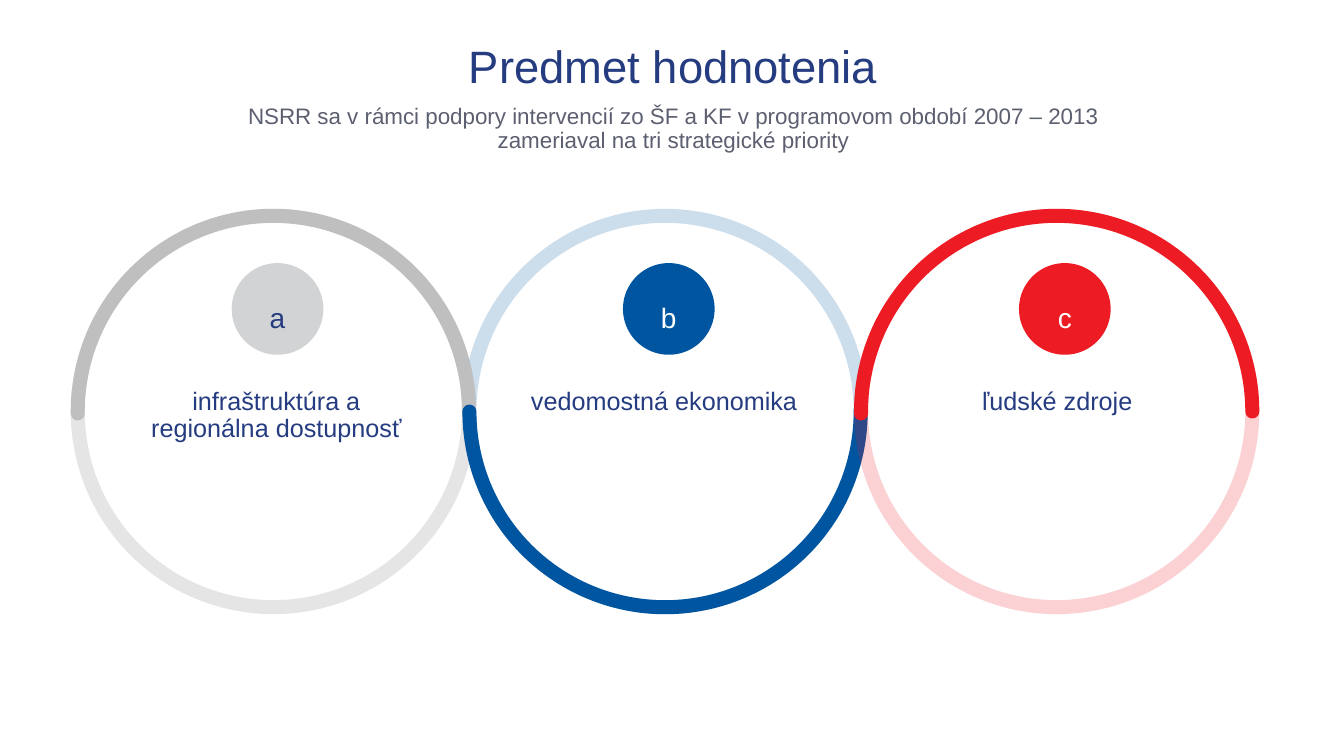
from lxml import etree
from pptx import Presentation
from pptx.dml.color import RGBColor
from pptx.enum.shapes import MSO_SHAPE
from pptx.enum.text import MSO_ANCHOR, PP_ALIGN
from pptx.oxml.ns import qn
from pptx.util import Cm, Pt

OVAL, ARC = MSO_SHAPE.OVAL, MSO_SHAPE.ARC
CENTER = PP_ALIGN.CENTER
TOP, MIDDLE = MSO_ANCHOR.TOP, MSO_ANCHOR.MIDDLE

NAVY = RGBColor(0x26, 0x3C, 0x80)
SLATE = RGBColor(0x5C, 0x5F, 0x70)
GRAY = RGBColor(0x80, 0x80, 0x80)
SILVER = RGBColor(0xBF, 0xBF, 0xBF)
PALE = RGBColor(0xD1, 0xD3, 0xD4)
BLUE = RGBColor(0x00, 0x55, 0xA1)
RED = RGBColor(0xED, 0x1C, 0x24)
WHITE = RGBColor(0xFF, 0xFF, 0xFF)

RING_LEFT, RING_TOP, RING_SIZE, RING_STEP = 1.96, 5.44, 9.86, 9.87
HALF_TURN = 107.66


class PrioritySlide:
    font = "Arial"
    ring_width = Pt(10)

    def __init__(self, presentation):
        self.slide = presentation.slides.add_slide(presentation.slide_layouts[6])

    def set_text(self, shape, text, size, color, anchor, spacing):
        frame = shape.text_frame
        frame.word_wrap = True
        frame.vertical_anchor = anchor
        frame.margin_top = frame.margin_bottom = Cm(0.16)
        frame.text = text
        paragraph = frame.paragraphs[0]
        paragraph.alignment = CENTER
        paragraph.line_spacing = spacing
        font = paragraph.runs[0].font
        font.name, font.size = self.font, Pt(size)
        font.color.rgb = color

    def text(self, left, top, width, height, text, size, color, anchor=TOP):
        box = self.slide.shapes.add_textbox(Cm(left), Cm(top), Cm(width), Cm(height))
        self.set_text(box, text, size, color, anchor, 0.9)

    def round_shape(self, kind, left, top, size):
        shape = self.slide.shapes.add_shape(kind, Cm(left), Cm(top), Cm(size), Cm(size))
        shape.shadow.inherit = False
        return shape

    def outline(self, kind, left, color):
        shape = self.round_shape(kind, left, RING_TOP, RING_SIZE)
        shape.fill.background()
        shape.line.color.rgb = color
        shape.line.width = self.ring_width
        return shape, shape.element.spPr.find(qn("a:ln"))

    def ring(self, left, color):
        ring, stroke = self.outline(OVAL, left, color)
        tint = stroke.find(".//" + qn("a:srgbClr"))
        etree.SubElement(tint, qn("a:alpha")).set("val", "20000")

    def arc(self, left, color, rotation):
        arc, stroke = self.outline(ARC, left, color)
        arc.adjustments[0] = HALF_TURN
        arc.adjustments[1] = 0
        arc.rotation = rotation
        stroke.set("cap", "rnd")

    def badge(self, left, letter, fill, color):
        badge = self.round_shape(OVAL, left, 6.63, 2.31)
        badge.fill.solid()
        badge.fill.fore_color.rgb = fill
        badge.line.fill.background()
        self.set_text(badge, letter, 20, color, MIDDLE, 1.5)


def main():
    presentation = Presentation()
    presentation.slide_width, presentation.slide_height = Cm(33.87), Cm(19.05)
    page = PrioritySlide(presentation)

    first, second, third = (RING_LEFT + RING_STEP * i for i in range(3))
    page.ring(second, BLUE)
    page.ring(first, GRAY)
    page.arc(first, SILVER, 0)
    page.arc(second, BLUE, 180)
    page.ring(third, RED)
    page.arc(third, RED, 0)

    page.text(2.36, 1.02, 29.21, 1.42, "Predmet hodnotenia", 32.4, NAVY, MIDDLE)
    page.text(4.98, 2.49, 23.98, 1.07,
              "NSRR sa v rámci podpory intervencií zo ŠF a KF v programovom "
              "období 2007 – 2013 zameriaval na tri strategické priority", 16, SLATE)

    priorities = [
        ("a", "infraštruktúra a regionálna dostupnosť", PALE, NAVY, 5.84, 3.18),
        ("b", "vedomostná ekonomika", BLUE, WHITE, 15.7, 12.95),
        ("c", "ľudské zdroje", RED, WHITE, 25.68, 22.86),
    ]
    for letter, label, fill, color, badge_left, label_left in priorities:
        page.badge(badge_left, letter, fill, color)
        page.text(label_left, 9.63, 7.57, 1.96, label, 18, NAVY)

    presentation.save("out.pptx")


if __name__ == "__main__":
    main()
